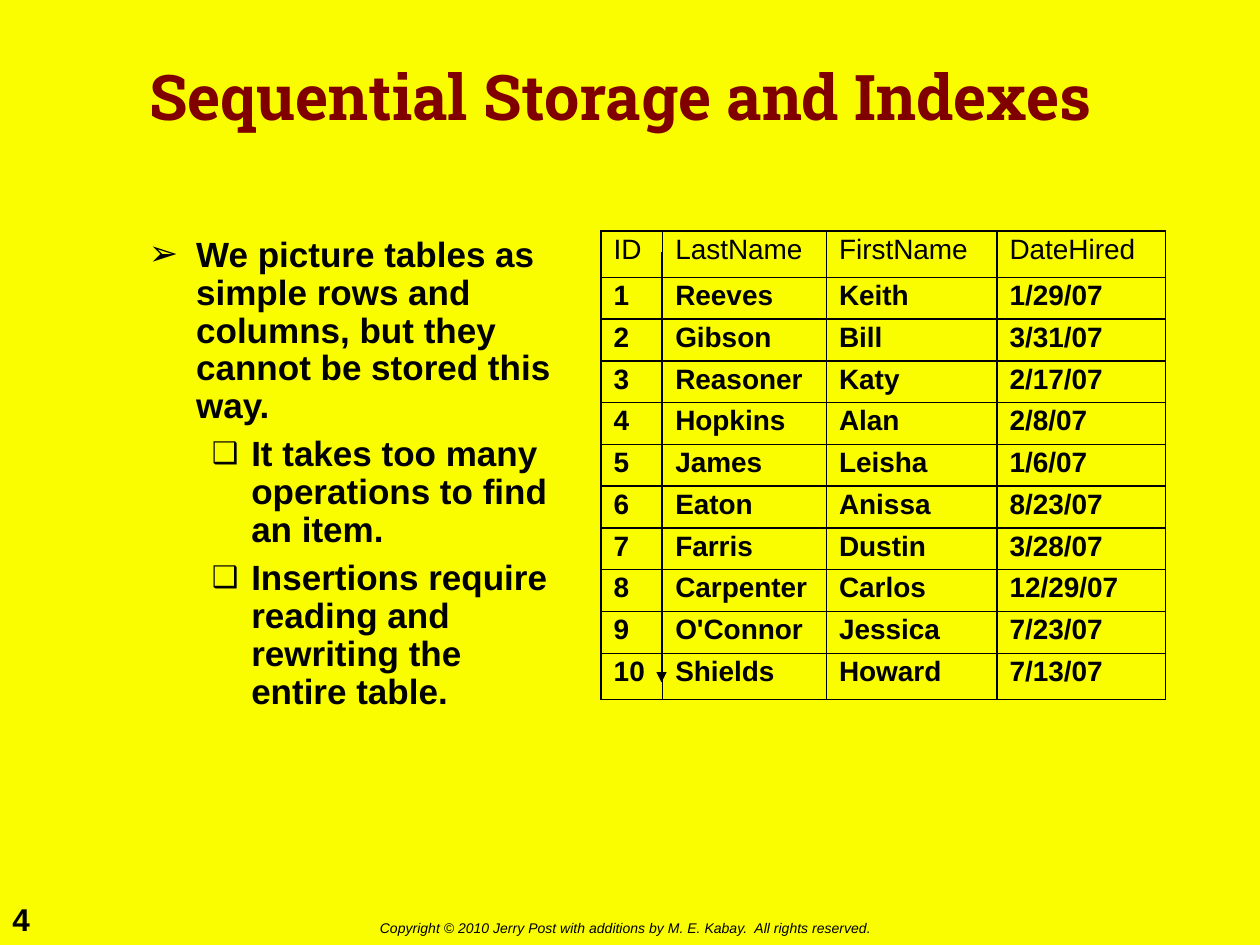
import lxml.etree
import pptx
import pptx.dml.color
import pptx.enum.shapes
import pptx.enum.text
import pptx.oxml.ns
import pptx.util

Pt = pptx.util.Pt
BLACK = "000000"
BULLETS = [
    ("We picture tables as simple rows and columns, but they cannot be stored this way.", 0),
    ("It takes too many operations to find an item.", 1),
    ("Insertions require reading and rewriting the entire table.", 1),
]
BULLET_STYLES = [("➢", 27, 27, 100), ("❑", 58.5, 22.5, 85)]
EMPLOYEES = [
    ("ID", "LastName", "FirstName", "DateHired"),
    ("1", "Reeves", "Keith", "1/29/07"),
    ("2", "Gibson", "Bill", "3/31/07"),
    ("3", "Reasoner", "Katy", "2/17/07"),
    ("4", "Hopkins", "Alan", "2/8/07"),
    ("5", "James", "Leisha", "1/6/07"),
    ("6", "Eaton", "Anissa", "8/23/07"),
    ("7", "Farris", "Dustin", "3/28/07"),
    ("8", "Carpenter", "Carlos", "12/29/07"),
    ("9", "O'Connor", "Jessica", "7/23/07"),
    ("10", "Shields", "Howard", "7/13/07"),
]
COLUMN_WIDTHS = [35.2, 93.6, 97.4, 96.4]


def color(value):
    """Return the colour for a hex string."""
    return pptx.dml.color.RGBColor.from_string(value)


def add_element(parent, tag, **attributes):
    """Append a DrawingML element to a parent."""
    element = lxml.etree.SubElement(parent, pptx.oxml.ns.qn(tag))
    for name, value in attributes.items():
        element.set(name, str(value))
    return element


def set_font(paragraph, size, name="Arial", value=BLACK, bold=False, italic=False):
    """Format the font of a whole paragraph."""
    font = paragraph.font
    font.size, font.name, font.bold, font.italic = Pt(size), name, bold, italic
    font.color.rgb = color(value)


def set_indent(paragraph, left, hanging):
    """Give a paragraph a left margin and a hanging indent."""
    properties = paragraph._p.get_or_add_pPr()
    properties.set("marL", str(Pt(left)))
    properties.set("indent", str(-Pt(hanging)))
    return properties


def add_title(slide, text):
    """Place and format the title."""
    title = slide.shapes.title
    title.left, title.top, title.width, title.height = Pt(78), Pt(12), Pt(564), Pt(90)
    frame = title.text_frame
    frame.text = text
    frame.vertical_anchor = pptx.enum.text.MSO_ANCHOR.MIDDLE
    paragraph = frame.paragraphs[0]
    paragraph.alignment = pptx.enum.text.PP_ALIGN.LEFT
    paragraph.line_spacing = 0.9
    set_font(paragraph, 36, "Roboto Slab", "800000", bold=True)


def add_label(slide, text, left, top, width, height, size, **style):
    """Add a single line of text that does not wrap."""
    frame = slide.shapes.add_textbox(Pt(left), Pt(top), Pt(width), Pt(height)).text_frame
    frame.word_wrap = False
    frame.text = text
    set_font(frame.paragraphs[0], size, **style)


def add_bullets(slide, items):
    """Add the bulleted text with two levels."""
    frame = slide.shapes.add_textbox(Pt(78), Pt(132), Pt(249), Pt(360)).text_frame
    frame.word_wrap = True
    for index, (text, level) in enumerate(items):
        paragraph = frame.add_paragraph() if index else frame.paragraphs[0]
        paragraph.text, paragraph.level = text, level
        paragraph.line_spacing = 0.9
        if index:
            paragraph.space_before = Pt(6)
        character, left, hanging, percent = BULLET_STYLES[level]
        properties = set_indent(paragraph, left, hanging)
        add_element(add_element(properties, "a:buClr"), "a:srgbClr", val=BLACK)
        add_element(properties, "a:buSzPct", val=percent * 1000)
        add_element(properties, "a:buFont", typeface="Arial")
        add_element(properties, "a:buChar", char=character)
        set_font(paragraph, 20, bold=True)


def format_cell(cell, text, bold):
    """Fill one table cell with text, borders and no background."""
    cell.text = text
    cell.margin_top = cell.margin_bottom = Pt(3.3)
    paragraph = cell.text_frame.paragraphs[0]
    paragraph.line_spacing = 0.9
    set_indent(paragraph, 27, 27)
    set_font(paragraph, 16, bold=bold)
    properties = cell._tc.get_or_add_tcPr()
    for side in ("a:lnL", "a:lnR", "a:lnT", "a:lnB"):
        border = add_element(properties, side, w=Pt(1))
        add_element(add_element(border, "a:solidFill"), "a:srgbClr", val=BLACK)
    cell.fill.background()


def add_employee_table(slide, records):
    """Add the table of employees."""
    heights = [26.5] + [23.2] * (len(records) - 2) + [26.5]
    frame = slide.shapes.add_table(
        len(records), len(COLUMN_WIDTHS), Pt(343.5), Pt(132), Pt(sum(COLUMN_WIDTHS)), Pt(sum(heights)))
    table = frame.table
    table.first_row = table.horz_banding = False
    for column, width in zip(table.columns, COLUMN_WIDTHS):
        column.width = Pt(width)
    for index, (row, height, record) in enumerate(zip(table.rows, heights, records)):
        row.height = Pt(height)
        for cell, text in zip(row.cells, record):
            format_cell(cell, text, bold=index > 0)


def add_arrow(slide, x, top, bottom):
    """Add a vertical arrow pointing down."""
    arrow = slide.shapes.add_connector(
        pptx.enum.shapes.MSO_CONNECTOR.STRAIGHT, Pt(x), Pt(top), Pt(x), Pt(bottom))
    arrow.line.color.rgb = color(BLACK)
    arrow.line.width = Pt(1)
    add_element(arrow.line._get_or_add_ln(), "a:tailEnd", type="triangle")
    add_element(arrow._element.spPr, "a:effectLst")


def main():
    """Build and save the slide."""
    presentation = pptx.Presentation()
    presentation.slide_width, presentation.slide_height = Pt(720), Pt(540)
    slide = presentation.slides.add_slide(presentation.slide_layouts[5])
    slide.background.fill.solid()
    slide.background.fill.fore_color.rgb = color("FAFD00")
    add_label(slide, "4", 0, 511, 36.5, 29, 18, bold=True)
    add_label(slide, "Copyright © 2010 Jerry Post with additions by M. E. Kabay.  All rights reserved.",
              210, 522, 304, 17, 8, italic=True)
    add_title(slide, "Sequential Storage and Indexes")
    add_bullets(slide, BULLETS)
    add_employee_table(slide, EMPLOYEES)
    add_arrow(slide, 378, 144, 390)
    presentation.save("out.pptx")


if __name__ == "__main__":
    main()
